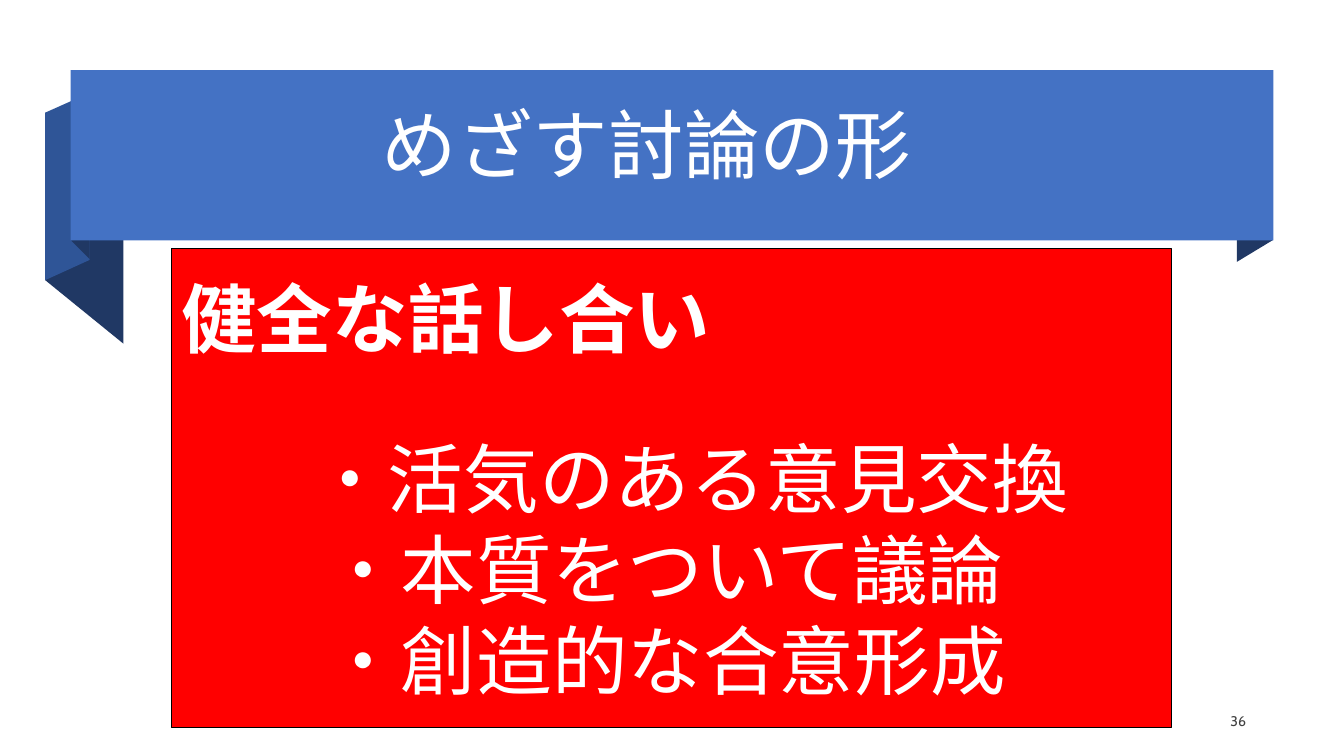
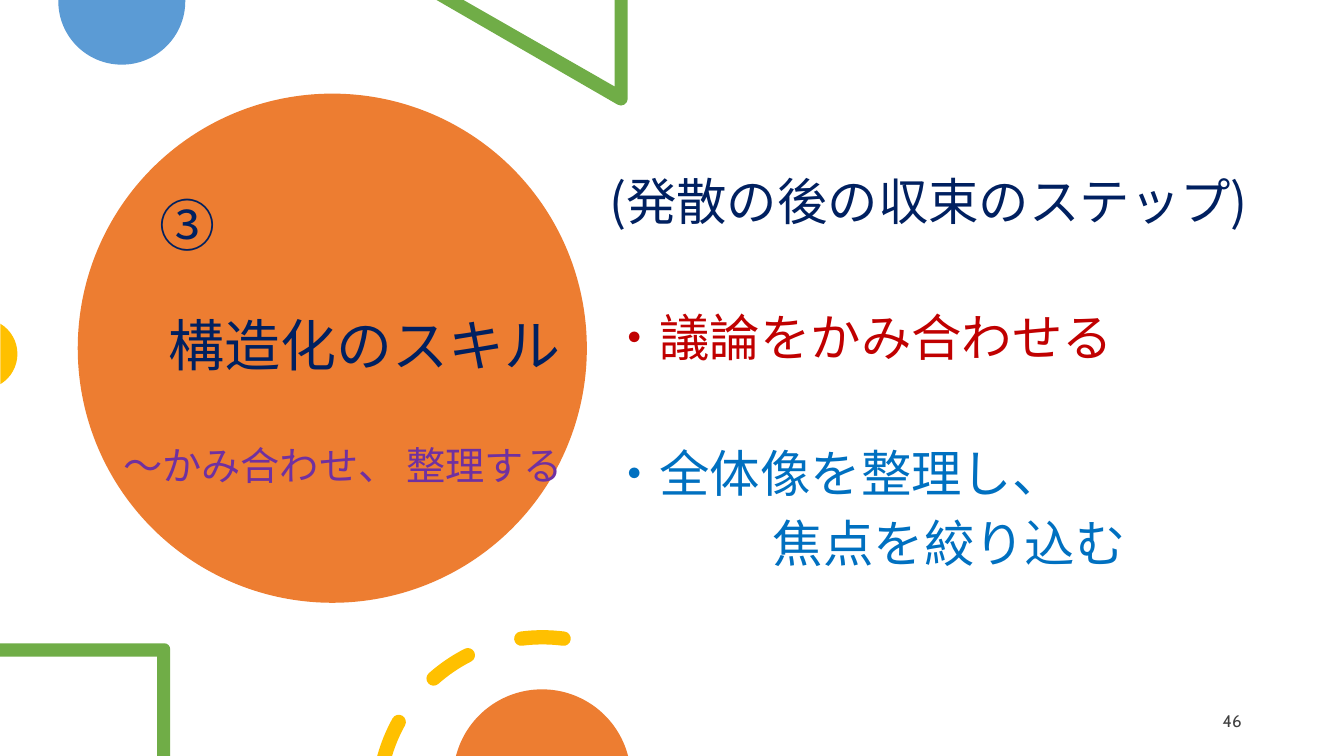
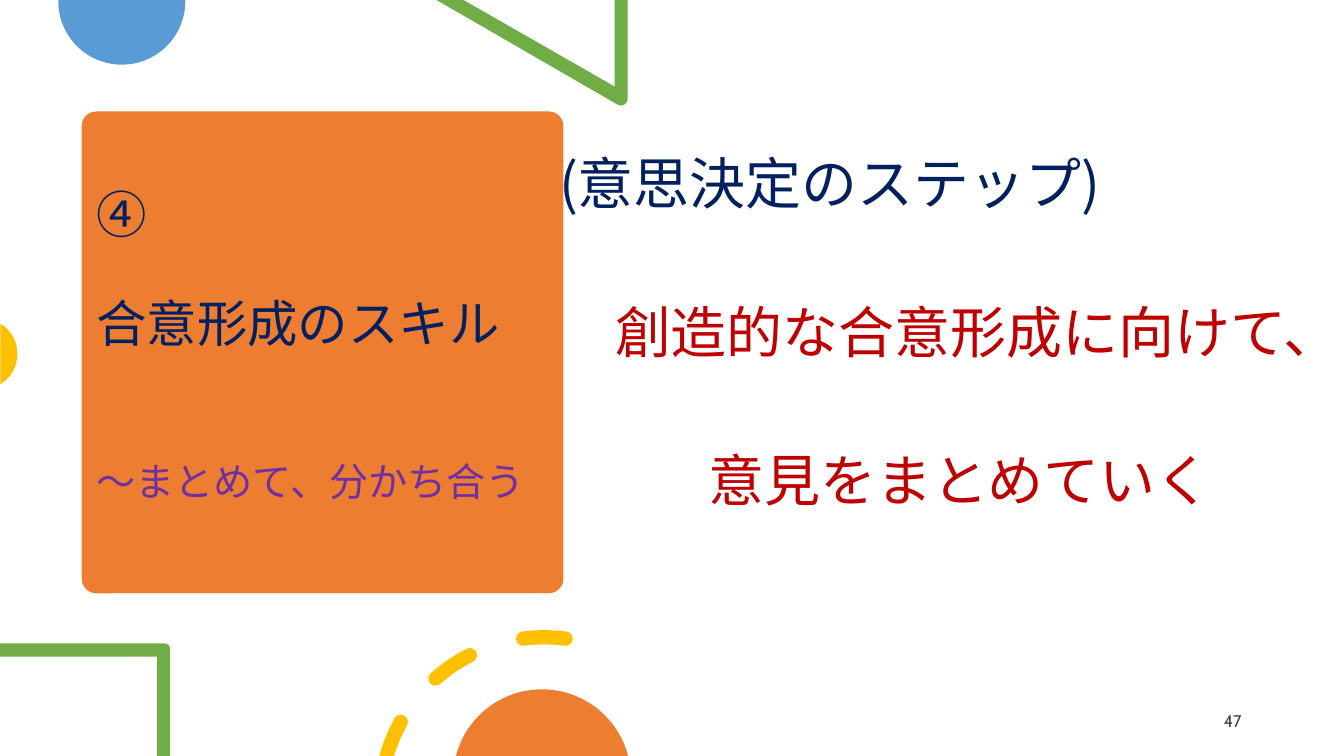
from dataclasses import dataclass
from math import asin, ceil, cos, degrees, radians, sin, tan

from lxml.etree import SubElement
from pptx import Presentation
from pptx.dml.color import RGBColor
from pptx.enum.shapes import MSO_SHAPE
from pptx.enum.text import MSO_ANCHOR, PP_ALIGN
from pptx.oxml.ns import qn
from pptx.util import Cm, Pt

WIDTH, HEIGHT = 33.87, 19.05


# Colours, fonts and type sizes
@dataclass(frozen=True)
class Theme:
    white: str = "FFFFFF"
    black: str = "000000"
    grey: str = "404040"
    navy: str = "002060"
    purple: str = "7030A0"
    crimson: str = "C00000"
    azure: str = "0070C0"
    red: str = "FF0000"
    band: str = "4472C4"
    band_side: str = "2F5597"
    band_shade: str = "203864"
    orange: str = "ED7D31"
    sky: str = "5B9BD5"
    green: str = "70AD47"
    yellow: str = "FFC000"
    text_font: str = "Noto Sans CJK JP"
    number_font: str = "Cabin"
    huge: int = 54
    large: int = 40
    medium: int = 36
    small: int = 28
    leading: float = 1.2


T = Theme()


@dataclass(frozen=True)
class Line:
    text: str
    size: int
    color: str
    before: int = 0
    indent: float = 0
    bold: bool = False


# Content: lengths in cm, spacing in points
GOAL_TITLE = [Line("めざす討論の形", T.huge, T.white)]
GOAL_POINTS = [
    Line("健全な話し合い", T.huge, T.white, bold=True),
    Line("・活気のある意見交換", T.huge, T.white, 49, 3.3),
    Line("・本質をついて議論", T.huge, T.white, 0, 3.63),
    Line("・創造的な合意形成", T.huge, T.white, 0, 3.63),
]
SKILLS = [
    dict(
        number=46,
        badge=(MSO_SHAPE.OVAL, (1.96, 2.36, 12.83, 12.83)),
        title_box=(2.59, 2.53, 12.37, 12.04),
        title=[
            Line("③", T.large, T.navy, 0, 1.17),
            Line("構造化のスキル", T.large, T.navy, 38, 1.41),
            Line("～かみ合わせ、 整理する", T.small, T.purple, 45, 0.27),
        ],
        body_box=(15.1, 4.17, 18.03, 13.56),
        body=[
            Line("(発散の後の収束のステップ)", T.medium, T.navy),
            Line("・議論をかみ合わせる", T.medium, T.crimson, 54),
            Line("・全体像を整理し、", T.medium, T.azure, 54),
            Line("焦点を絞り込む", T.medium, T.azure, 7, 4.13),
        ],
        dash_centre=13.67,
    ),
    dict(
        number=47,
        badge=(MSO_SHAPE.ROUNDED_RECTANGLE, (2.06, 2.81, 12.14, 12.14)),
        title_box=(2.18, 2.87, 12.42, 11.58),
        title=[
            Line("④", T.medium, T.navy),
            Line("合意形成のスキル", T.medium, T.navy, 35),
            Line("～まとめて、分かち合う", T.small, T.purple, 74),
        ],
        body_box=(13.84, 3.63, 19.51, 12.1),
        body=[
            Line("(意思決定のステップ)", T.large, T.navy),
            Line("創造的な合意形成に向けて、", T.large, T.crimson, 58, 1.41),
            Line("意見をまとめていく", T.large, T.crimson, 58, 3.76),
        ],
        dash_centre=13.72,
    ),
]

# Ribbon folds behind the title band, back to front
RIBBON = [
    ([(3.11, 8.66), (1.14, 7.06), (1.14, 2.84), (3.11, 4.45)], T.band_shade),
    ([(2.26, 6.55), (1.14, 7.06), (1.14, 2.84), (2.26, 2.34)], T.band_side),
    ([(2.26, 6.53), (1.8, 6.07), (1.8, 1.78), (2.26, 2.26)], T.band_shade),
    ([(32.08, 6.05), (31.17, 6.6), (31.17, 2.31), (32.08, 1.78)], T.band_shade),
]
# Start and end angle; a stroke without a start is cut by the slide edge
DASH_ANGLES = [(None, 209), (228.5, 243), (262.6, 277.4)]


# Geometry: a segment is one point (straight) or three points (curve)
def straight(*points):
    return [(point,) for point in points]


def on_circle(cx, cy, radius, angle):
    return cx + radius * cos(radians(angle)), cy + radius * sin(radians(angle))


def arc(cx, cy, radius, start, end):
    pieces = ceil(abs(end - start) / 90)
    step = (end - start) / pieces
    handle = 4 / 3 * tan(radians(step) / 4) * radius
    segments = straight(on_circle(cx, cy, radius, start))
    for i in range(pieces):
        a, b = start + i * step, start + (i + 1) * step
        leave = on_circle(*on_circle(cx, cy, radius, a), handle, a + 90)
        arrive = on_circle(*on_circle(cx, cy, radius, b), -handle, b + 90)
        segments.append((leave, arrive, on_circle(cx, cy, radius, b)))
    return segments


def dash(cx, start, end, cy=20.2, radius=4.14, half=0.18):
    """Outline of a curved stroke with round ends."""
    outer, inner = radius + half, radius - half

    def start_on(r):
        return 180 + degrees(asin((cy - HEIGHT) / r)) if start is None else start

    def cap(angle, turn):
        centre = on_circle(cx, cy, radius, angle)
        return arc(*centre, half, turn, turn + 180)[1:]

    return (arc(cx, cy, outer, start_on(outer), end) + cap(end, end)
            + arc(cx, cy, inner, end, start_on(inner))[1:]
            + ([] if start is None else cap(start, start + 180)))


# Drawing helpers
def rgb(color):
    return RGBColor.from_string(color)


def paint(shape, color):
    shape.shadow.inherit = False
    shape.fill.solid()
    shape.fill.fore_color.rgb = rgb(color)
    shape.line.fill.background()


def outline(slide, contours, color):
    builder = None
    drawn = []
    for (start,), *segments in contours:
        origin = tuple(map(Cm, start))
        if builder is None:
            builder = slide.shapes.build_freeform(*origin)
        else:
            builder.move_to(*origin)
        points = [(Cm(x), Cm(y)) for segment in segments for x, y in segment]
        builder.add_line_segments(points, close=True)
        drawn += segments
    shape = builder.convert_to_shape()
    paint(shape, color)
    # Join the three points of each curve into one Bezier segment
    outline_path = next(shape._element.iter(qn("a:path")))
    line_nodes = iter(outline_path.findall(qn("a:lnTo")))
    for segment in drawn:
        nodes = [next(line_nodes) for _ in segment]
        if len(nodes) == 3:
            curve = SubElement(outline_path, qn("a:cubicBezTo"))
            nodes[0].addprevious(curve)
            for node in nodes:
                curve.append(node[0])
                outline_path.remove(node)


def block(slide, preset, box, color):
    shape = slide.shapes.add_shape(preset, *map(Cm, box))
    paint(shape, color)
    return shape


def write(frame, lines, anchor=MSO_ANCHOR.MIDDLE):
    frame.word_wrap = True
    frame.vertical_anchor = anchor
    for i, line in enumerate(lines):
        paragraph = frame.paragraphs[0] if i == 0 else frame.add_paragraph()
        paragraph.text = line.text
        paragraph.alignment = PP_ALIGN.LEFT
        paragraph.line_spacing = Pt(round(line.size * T.leading))
        paragraph.space_before = Pt(line.before)
        font = paragraph.font
        font.size, font.bold, font.name = Pt(line.size), line.bold, T.text_font
        font.color.rgb = rgb(line.color)
        # Left indent and East Asian typeface
        properties = paragraph._p.get_or_add_pPr()
        properties.set("marL", str(Cm(line.indent)))
        properties.set("indent", "0")
        SubElement(properties.find(qn("a:defRPr")), qn("a:ea"), typeface=T.text_font)


def text_box(slide, box, lines, anchor=MSO_ANCHOR.MIDDLE):
    write(slide.shapes.add_textbox(*map(Cm, box)).text_frame, lines, anchor)


def page_number(slide, number, box, size):
    frame = slide.shapes.add_textbox(*map(Cm, box)).text_frame
    frame.word_wrap = True
    frame.vertical_anchor = MSO_ANCHOR.MIDDLE
    paragraph = frame.paragraphs[0]
    paragraph.text = str(number)
    paragraph.alignment = PP_ALIGN.RIGHT
    paragraph.space_after = Pt(6)
    paragraph.font.size, paragraph.font.name = Pt(size), T.number_font
    paragraph.font.color.rgb = rgb(T.grey)


def top_decorations(slide):
    """Disc, triangle and half disc cut off by the slide edges."""
    disc = straight((4.67, 0), (1.47, 0)) + arc(3.07, 0.03, 1.6, 180, 0)
    triangle = straight((15.82, 0), (15.49, 0), (15.49, 2.18), (11.68, 0), (11, 0))
    outline(slide, [disc], T.sky)
    outline(slide, [triangle + arc(15.65, 2.49, 0.17, 120, 0)], T.green)
    outline(slide, [arc(-0.45, 8.92, 0.89, -59, 59)], T.yellow)


def bottom_decorations(slide, dash_centre):
    """Frame corner, dashed ring and disc cut off by the slide edge."""
    corner = (straight((0, 16.55), (0, 16.21)) + arc(4.14, 16.36, 0.15, -90, 0)
              + straight((4.29, HEIGHT), (3.96, HEIGHT), (3.96, 16.55)))
    outline(slide, [corner], T.green)
    outline(slide, [dash(dash_centre, *angles) for angles in DASH_ANGLES], T.yellow)
    outline(slide, [arc(13.66, 19.61, 2.24, 194.5, 345.5)], T.orange)


# Slides
def goal_slide(slide):
    for fold, color in RIBBON:
        outline(slide, [straight(*fold)], color)
    block(slide, MSO_SHAPE.RECTANGLE, (1.78, 1.77, 30.31, 4.29), T.band)
    text_box(slide, (9.37, 1.82, 14.73, 3.58), GOAL_TITLE)
    page_number(slide, 36, (29.74, 17.73, 1.91, 0.89), 10)
    panel = block(slide, MSO_SHAPE.RECTANGLE, (4.32, 6.26, 25.2, 12.08), T.red)
    panel.line.color.rgb = rgb(T.black)
    panel.line.width = Pt(0.75)
    write(panel.text_frame, GOAL_POINTS)


def skill_slide(slide, skill):
    preset, box = skill["badge"]
    badge = block(slide, preset, box, T.orange)
    if preset == MSO_SHAPE.ROUNDED_RECTANGLE:
        badge.adjustments[0] = 0.03
    text_box(slide, skill["title_box"], skill["title"])
    top_decorations(slide)
    text_box(slide, skill["body_box"], skill["body"], MSO_ANCHOR.TOP)
    bottom_decorations(slide, skill["dash_centre"])
    page_number(slide, skill["number"], (29.18, 17.65, 2.36, 1.02), 12)


def main():
    deck = Presentation()
    deck.slide_width, deck.slide_height = Cm(WIDTH), Cm(HEIGHT)
    blank = deck.slide_layouts[6]
    goal_slide(deck.slides.add_slide(blank))
    for skill in SKILLS:
        skill_slide(deck.slides.add_slide(blank), skill)
    deck.save("out.pptx")


if __name__ == "__main__":
    main()
